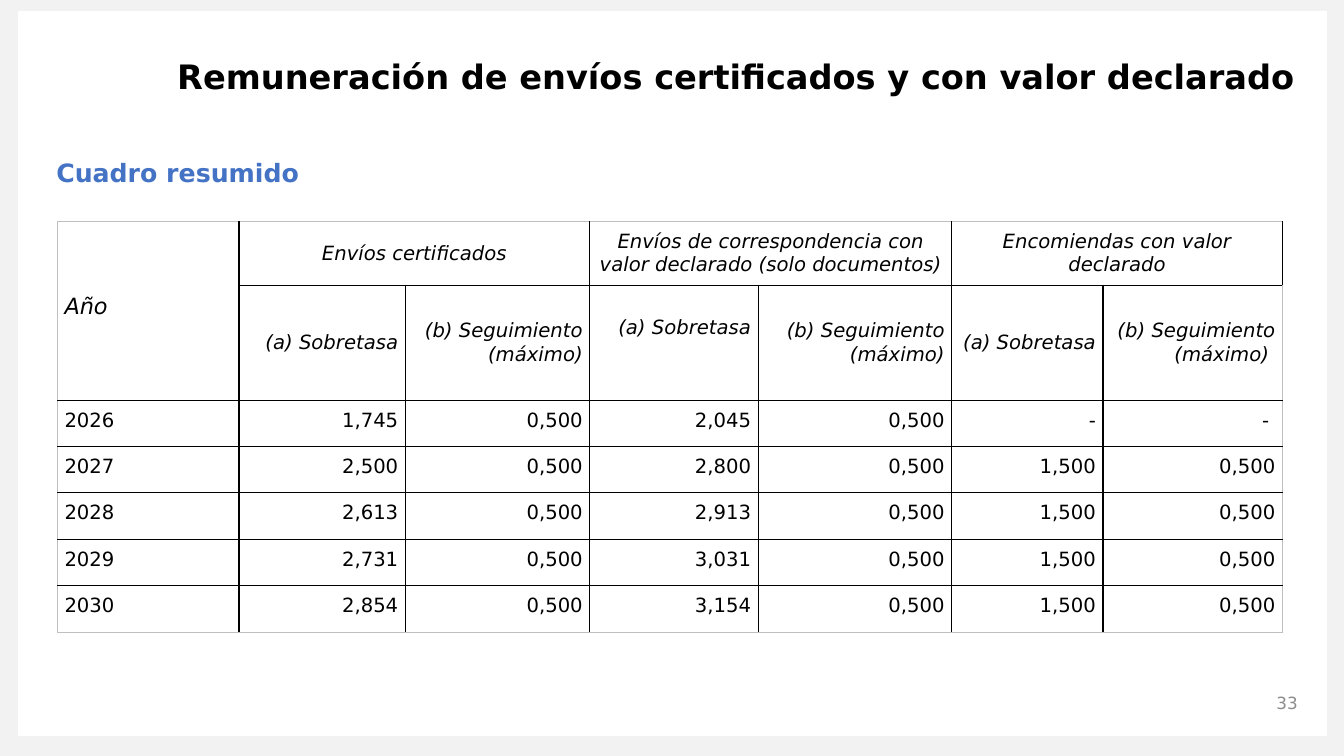
import pptx
import pptx.util
import pptx.dml.color
import pptx.enum.shapes
import pptx.enum.text
import pptx.oxml
from pptx.oxml.ns import nsdecls

RGB = pptx.dml.color.RGBColor
BLACK = RGB(0x00, 0x00, 0x00)
WHITE = RGB(0xFF, 0xFF, 0xFF)
PALE = RGB(0xF2, 0xF2, 0xF2)
BLUE = RGB(0x44, 0x72, 0xC4)
GREY = RGB(0x8C, 0x8C, 0x8C)
EDGE = RGB(0xBF, 0xBF, 0xBF)
LEFT, MID, RIGHT = (pptx.enum.text.PP_ALIGN.LEFT, pptx.enum.text.PP_ALIGN.CENTER,
                    pptx.enum.text.PP_ALIGN.RIGHT)
TOP = pptx.enum.text.MSO_ANCHOR.TOP
HALF = pptx.enum.text.MSO_ANCHOR.MIDDLE
FONT = "DejaVu Sans"

# Slide on a fine grid of 1333 columns by 750 rows
deck = pptx.Presentation()
deck.slide_width = pptx.util.Inches(13.33)
deck.slide_height = pptx.util.Inches(7.5)
UNIT = deck.slide_height // 750
slide = deck.slides.add_slide(deck.slide_layouts[6])


def grid(*cells):
    return [round(n * UNIT) for n in cells]


def write(frame, text, size=14, color=BLACK, bold=False, italic=False,
          align=LEFT, anchor=HALF, lead=None):
    frame.word_wrap = True
    frame.vertical_anchor = anchor
    para = frame.paragraphs[0]
    para.alignment = align
    if lead:
        para.line_spacing = lead
    run = para.add_run()
    run.text = text
    font = run.font
    font.name, font.size = FONT, pptx.util.Pt(size)
    font.bold, font.italic = bold, italic
    font.color.rgb = color


# Pale frame and white page
for place, color in [((0, 0, 1333, 750), PALE), ((18, 11, 1298, 719), WHITE)]:
    page = slide.shapes.add_shape(pptx.enum.shapes.MSO_SHAPE.RECTANGLE, *grid(*place))
    page.shadow.inherit = False
    page.fill.solid()
    page.fill.fore_color.rgb = color
    page.line.fill.background()

# Title, subtitle and page number
for place, text, form in [
    ((166, 47, 1154, 62), "Remuneración de envíos certificados y con valor declarado",
     dict(size=24, bold=True, lead=0.9)),
    ((46, 151, 311, 37), "Cuadro resumido",
     dict(size=18, bold=True, color=BLUE, anchor=TOP)),
    ((997, 677, 300, 40), "33", dict(size=12, color=GREY, align=RIGHT)),
]:
    write(slide.shapes.add_textbox(*grid(*place)).text_frame, text, **form)

# Table data
FEE, TRACK = "(a) Sobretasa", "(b) Seguimiento (máximo)"
ROWS = [
    ["Año", "Envíos certificados", "",
     "Envíos de correspondencia con valor declarado (solo documentos)", "",
     "Encomiendas con valor declarado", ""],
    ["", FEE, TRACK, FEE, TRACK, FEE, TRACK + " "],
    ["2026", "1,745", "0,500", "2,045", "0,500", "-", "- "],
    ["2027", "2,500", "0,500", "2,800", "0,500", "1,500", "0,500"],
    ["2028", "2,613", "0,500", "2,913", "0,500", "1,500", "0,500"],
    ["2029", "2,731", "0,500", "3,031", "0,500", "1,500", "0,500"],
    ["2030", "2,854", "0,500", "3,154", "0,500", "1,500", "0,500"],
]
WIDE = [180, 165, 183, 167, 192, 150, 178]
HIGH = [63, 114] + [46] * 5

# Table frame and merged heads
table = slide.shapes.add_table(
    len(HIGH), len(WIDE), *grid(57, 220, sum(WIDE), sum(HIGH))).table
table.first_row = table.horz_banding = False
for col, size in zip(table.columns, grid(*WIDE)):
    col.width = size
for row, size in zip(table.rows, grid(*HIGH)):
    row.height = size
table.cell(0, 0).merge(table.cell(1, 0))
for c in (1, 3, 5):
    table.cell(0, c).merge(table.cell(0, c + 1))

# Cell text, borders and fill
for r, row in enumerate(ROWS):
    for c, text in enumerate(row):
        cell = table.cell(r, c)
        cell.margin_left = cell.margin_right = grid(7)[0]
        cell.margin_top = cell.margin_bottom = 0
        if text:
            write(cell.text_frame, text, size=16 if text == "Año" else 14,
                  italic=r < 2, align=LEFT if c == 0 else MID if r == 0 else RIGHT,
                  lead=pptx.util.Pt(12) if c == 0 or r > 1 else None)
            cell.vertical_anchor = HALF
        outer = dict(L=c == 0, R=c == len(WIDE) - 1, T=r == 0, B=r == len(HIGH) - 1)
        props = cell._tc.get_or_add_tcPr()
        for i, (side, out) in enumerate(outer.items()):
            props.insert(i, pptx.oxml.parse_xml(
                f'<a:ln{side} {nsdecls("a")} w="{pptx.util.Pt(0.5 if out else 1)}">'
                f'<a:solidFill><a:srgbClr val="{EDGE if out else BLACK}"/></a:solidFill>'
                f'</a:ln{side}>'))
        cell.fill.solid()
        cell.fill.fore_color.rgb = WHITE

# The middle fee head sits a little higher
table.cell(1, 3).margin_bottom = grid(30)[0]

deck.save("out.pptx")
